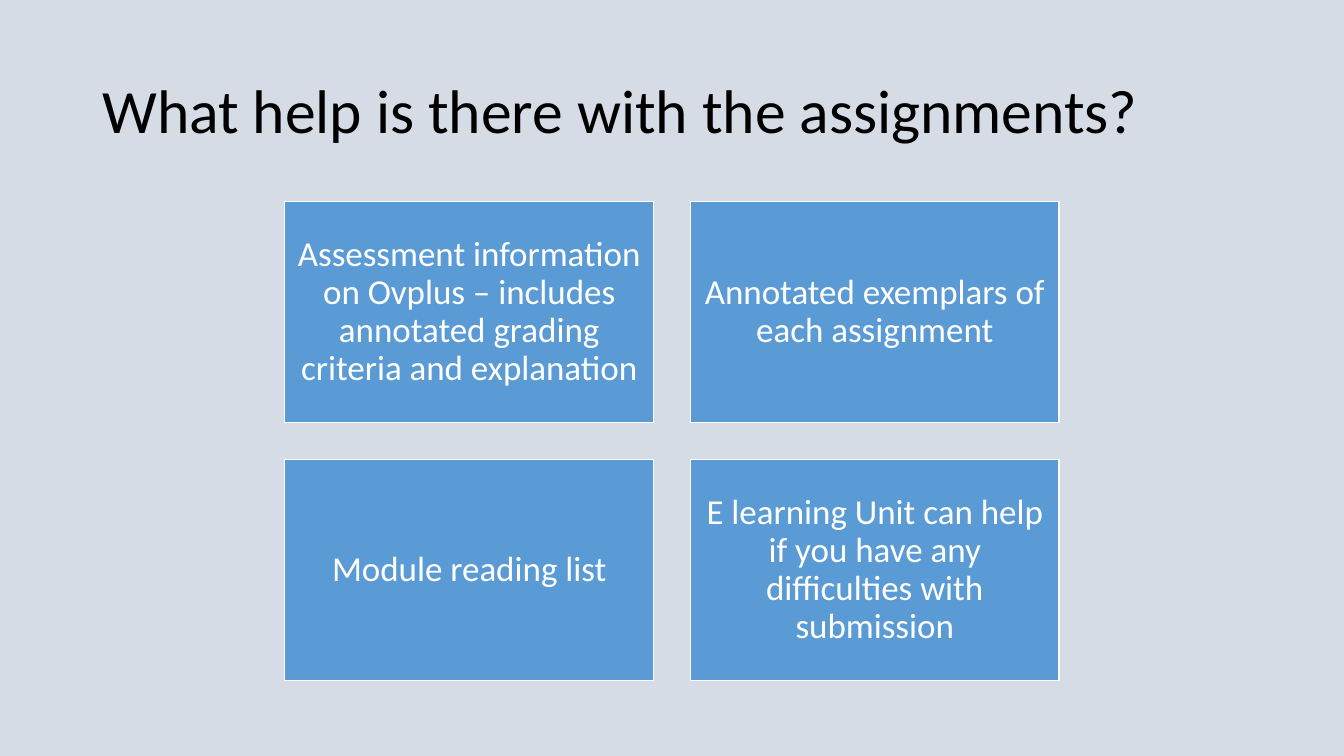
from pptx import Presentation
from pptx.dml.color import RGBColor
from pptx.enum.shapes import MSO_SHAPE
from pptx.enum.text import MSO_ANCHOR, PP_ALIGN
from pptx.util import Pt

RECTANGLE = MSO_SHAPE.RECTANGLE
MIDDLE = MSO_ANCHOR.MIDDLE
LEFT, CENTER = PP_ALIGN.LEFT, PP_ALIGN.CENTER

HEADING = "What help is there with the assignments?"
HELP_SOURCES = [
    "Assessment information on Ovplus – includes annotated grading criteria and explanation",
    "Annotated exemplars of each assignment",
    "Module reading list",
    "E learning Unit can help if you have any difficulties with submission",
]

THEME = {
    "font": "Calibri",
    "background": RGBColor(0xD6, 0xDC, 0xE5),
    "heading": RGBColor(0, 0, 0),
    "card": RGBColor(0x5B, 0x9B, 0xD5),
    "card_text": RGBColor(0xFF, 0xFF, 0xFF),
    "heading_size": 44,
    "card_size": 25,
}

SLIDE_WIDTH, SLIDE_HEIGHT = 960, 540
COLUMNS = 2
CARD_WIDTH, CARD_HEIGHT, CARD_GAP = 263.4, 158, 26.3
CARDS_TOP = 144
CARDS_LEFT = (SLIDE_WIDTH - COLUMNS * CARD_WIDTH - (COLUMNS - 1) * CARD_GAP) / 2


def write(holder, text, size, color, align, inset_x, inset_y):
    frame = holder.text_frame
    frame.word_wrap = True
    frame.vertical_anchor = MIDDLE
    frame.margin_left = frame.margin_right = Pt(inset_x)
    frame.margin_top = frame.margin_bottom = Pt(inset_y)
    paragraph = frame.paragraphs[0]
    paragraph.alignment = align
    paragraph.line_spacing = 0.9
    run = paragraph.add_run()
    run.text = text
    run.font.name = THEME["font"]
    run.font.size = Pt(size)
    run.font.color.rgb = color


def add_card(slide, index, text):
    row, column = divmod(index, COLUMNS)
    card = slide.shapes.add_shape(
        RECTANGLE,
        Pt(CARDS_LEFT + column * (CARD_WIDTH + CARD_GAP)),
        Pt(CARDS_TOP + row * (CARD_HEIGHT + CARD_GAP)),
        Pt(CARD_WIDTH),
        Pt(CARD_HEIGHT),
    )
    card.shadow.inherit = False
    card.fill.solid()
    card.fill.fore_color.rgb = THEME["card"]
    card.line.color.rgb = THEME["card_text"]
    card.line.width = Pt(1)
    write(card, text, THEME["card_size"], THEME["card_text"], CENTER, 7.5, 7.5)


def main():
    deck = Presentation()
    deck.slide_width, deck.slide_height = Pt(SLIDE_WIDTH), Pt(SLIDE_HEIGHT)
    slide = deck.slides.add_slide(deck.slide_layouts[6])
    slide.background.fill.solid()
    slide.background.fill.fore_color.rgb = THEME["background"]

    heading = slide.shapes.add_textbox(Pt(66), Pt(28.75), Pt(828), Pt(104.4))
    write(heading, HEADING, THEME["heading_size"], THEME["heading"], LEFT, 7.2, 3.6)

    for index, text in enumerate(HELP_SOURCES):
        add_card(slide, index, text)

    deck.save("out.pptx")


if __name__ == "__main__":
    main()
